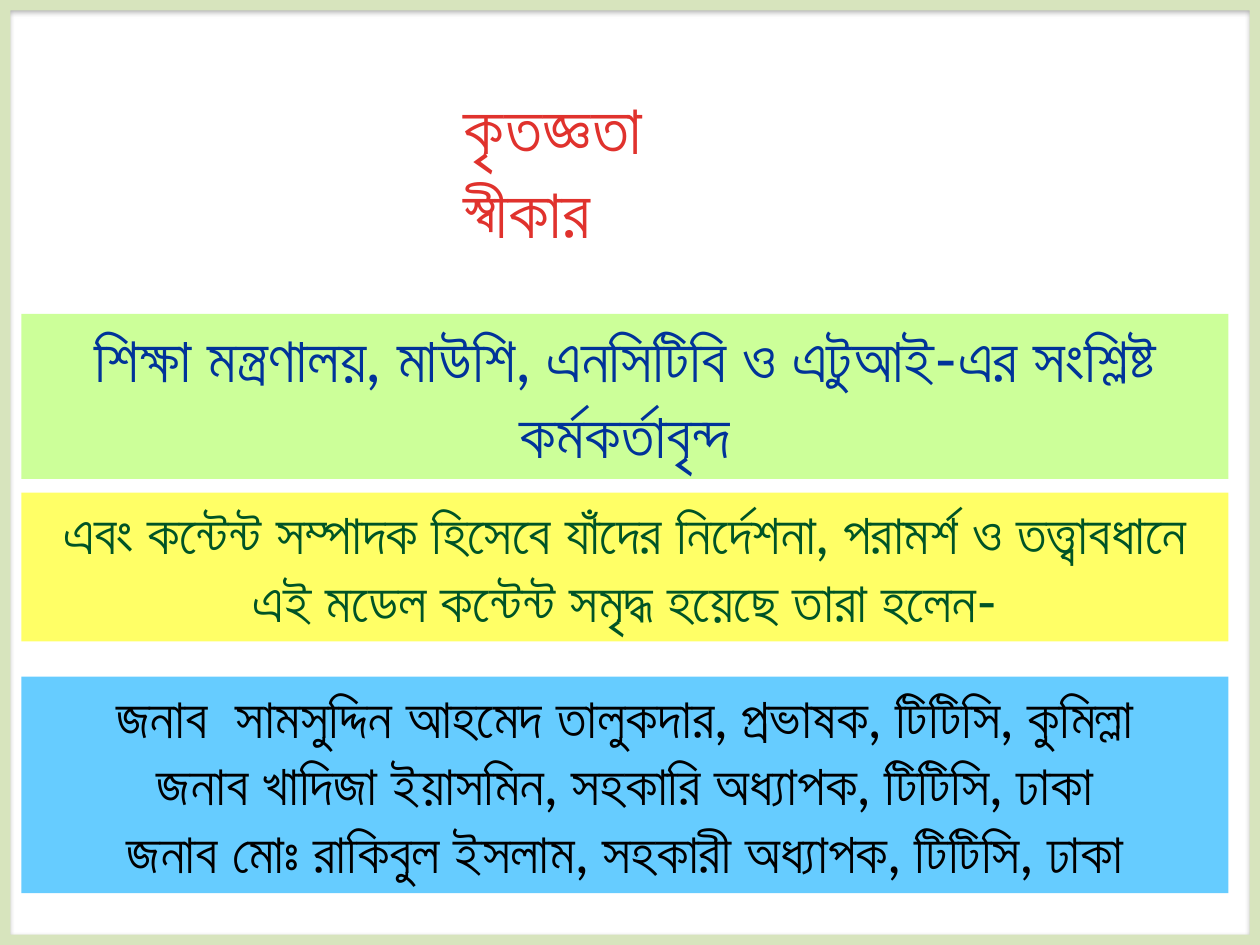
from dataclasses import dataclass

from lxml.etree import SubElement
from pptx import Presentation
from pptx.dml.color import RGBColor
from pptx.enum.shapes import MSO_SHAPE
from pptx.enum.text import MSO_ANCHOR, MSO_AUTO_SIZE, PP_ALIGN
from pptx.oxml.ns import qn
from pptx.util import Pt


@dataclass(frozen=True)
class Theme:
    """Colours, fonts and type sizes of the slide."""
    title_font: str = "Roboto"
    body_font: str = "Lato"
    title_size: int = 40
    lead_size: int = 36
    body_size: int = 32
    title_light: str = "E0322D"
    title_dark: str = "A2201C"
    green: str = "CCFF99"
    yellow: str = "FFFF66"
    blue: str = "66CCFF"
    navy: str = "003399"
    forest: str = "005426"
    black: str = "000000"
    border: str = "D7E4BD"


THEME = Theme()
SLIDE_WIDTH, SLIDE_HEIGHT = 720, 540
BAND_LEFT, BAND_WIDTH = 12.24, 689.76

MINISTRY = ["শিক্ষা মন্ত্রণালয়, মাউশি, এনসিটিবি ও এটুআই-এর সংশ্লিষ্ট কর্মকর্তাবৃন্দ"]
EDITORS_INTRO = [
    "এবং কন্টেন্ট সম্পাদক হিসেবে যাঁদের নির্দেশনা, পরামর্শ ও তত্ত্বাবধানে "
    "এই মডেল কন্টেন্ট সমৃদ্ধ হয়েছে তারা হলেন-"
]
EDITORS = [
    "জনাব  সামসুদ্দিন আহমেদ তালুকদার, প্রভাষক, টিটিসি, কুমিল্লা",
    "জনাব খাদিজা ইয়াসমিন, সহকারি অধ্যাপক, টিটিসি, ঢাকা",
    "জনাব মোঃ রাকিবুল ইসলাম, সহকারী অধ্যাপক, টিটিসি, ঢাকা",
]


def place(shape, left, top, width, height):
    """Move and size a shape, in points."""
    shape.left, shape.top = Pt(left), Pt(top)
    shape.width, shape.height = Pt(width), Pt(height)


def set_title(slide, text):
    """Fill the title placeholder with gradient-coloured text."""
    title = slide.shapes.title
    place(title, 257.76, 44.64, 185.76, 105.12)
    frame = title.text_frame
    frame.text = text
    frame.word_wrap = True
    frame.auto_size = MSO_AUTO_SIZE.SHAPE_TO_FIT_TEXT
    frame.vertical_anchor = MSO_ANCHOR.TOP
    paragraph = frame.paragraphs[0]
    paragraph.alignment = PP_ALIGN.LEFT
    font = paragraph.font
    font.name, font.size, font.bold = THEME.title_font, Pt(THEME.title_size), True
    font.fill.gradient()
    font.fill.gradient_angle = 270
    stops = ((0.25, THEME.title_light), (1, THEME.title_dark))
    for stop, (position, color) in zip(font.fill.gradient_stops, stops):
        stop.position = position
        stop.color.rgb = RGBColor.from_string(color)
    paragraph._p.pPr.find(qn("a:defRPr")).set("spc", "50")


def add_plain_shape(slide, kind, left, top, width, height, color):
    """Add a filled preset shape without line or shadow."""
    shape = slide.shapes.add_shape(kind, Pt(left), Pt(top), Pt(width), Pt(height))
    shape.shadow.inherit = False
    shape.fill.solid()
    shape.fill.fore_color.rgb = RGBColor.from_string(color)
    shape.line.fill.background()
    return shape


def add_band(slide, top, height, fill, lines, size, color):
    """Add a full-width coloured band of centred lines."""
    band = add_plain_shape(slide, MSO_SHAPE.RECTANGLE, BAND_LEFT, top, BAND_WIDTH, height, fill)
    frame = band.text_frame
    frame.text = "\n".join(lines)
    frame.word_wrap = True
    frame.auto_size = MSO_AUTO_SIZE.SHAPE_TO_FIT_TEXT
    frame.vertical_anchor = MSO_ANCHOR.TOP
    for paragraph in frame.paragraphs:
        paragraph.alignment = PP_ALIGN.CENTER
        paragraph.font.name = THEME.body_font
        paragraph.font.size = Pt(size)
        paragraph.font.color.rgb = RGBColor.from_string(color)


def add_border(slide):
    """Frame the whole slide with a thin border and a soft shadow."""
    border = add_plain_shape(slide, MSO_SHAPE.FRAME, 0, 0, SLIDE_WIDTH, SLIDE_HEIGHT, THEME.border)
    border.adjustments[0] = 0.011
    effects = border._element.spPr.find(qn("a:effectLst"))
    shadow = SubElement(effects, qn("a:outerShdw"), blurRad=str(Pt(3.1)),
                        dist=str(Pt(1.8)), dir="5400000", rotWithShape="0")
    color = SubElement(shadow, qn("a:srgbClr"), val=THEME.black)
    SubElement(color, qn("a:alpha"), val="35000")


def main():
    """Build the acknowledgement slide and save it."""
    presentation = Presentation()
    presentation.slide_width, presentation.slide_height = Pt(SLIDE_WIDTH), Pt(SLIDE_HEIGHT)
    slide = presentation.slides.add_slide(presentation.slide_layouts.get_by_name("Title Only"))
    set_title(slide, "কৃতজ্ঞতা স্বীকার")
    add_band(slide, 281.5, 85, THEME.yellow, EDITORS_INTRO, THEME.body_size, THEME.forest)
    add_band(slide, 386.6, 123.8, THEME.blue, EDITORS, THEME.body_size, THEME.black)
    add_band(slide, 179.3, 94.3, THEME.green, MINISTRY, THEME.lead_size, THEME.navy)
    add_border(slide)
    presentation.save("out.pptx")


if __name__ == "__main__":
    main()
